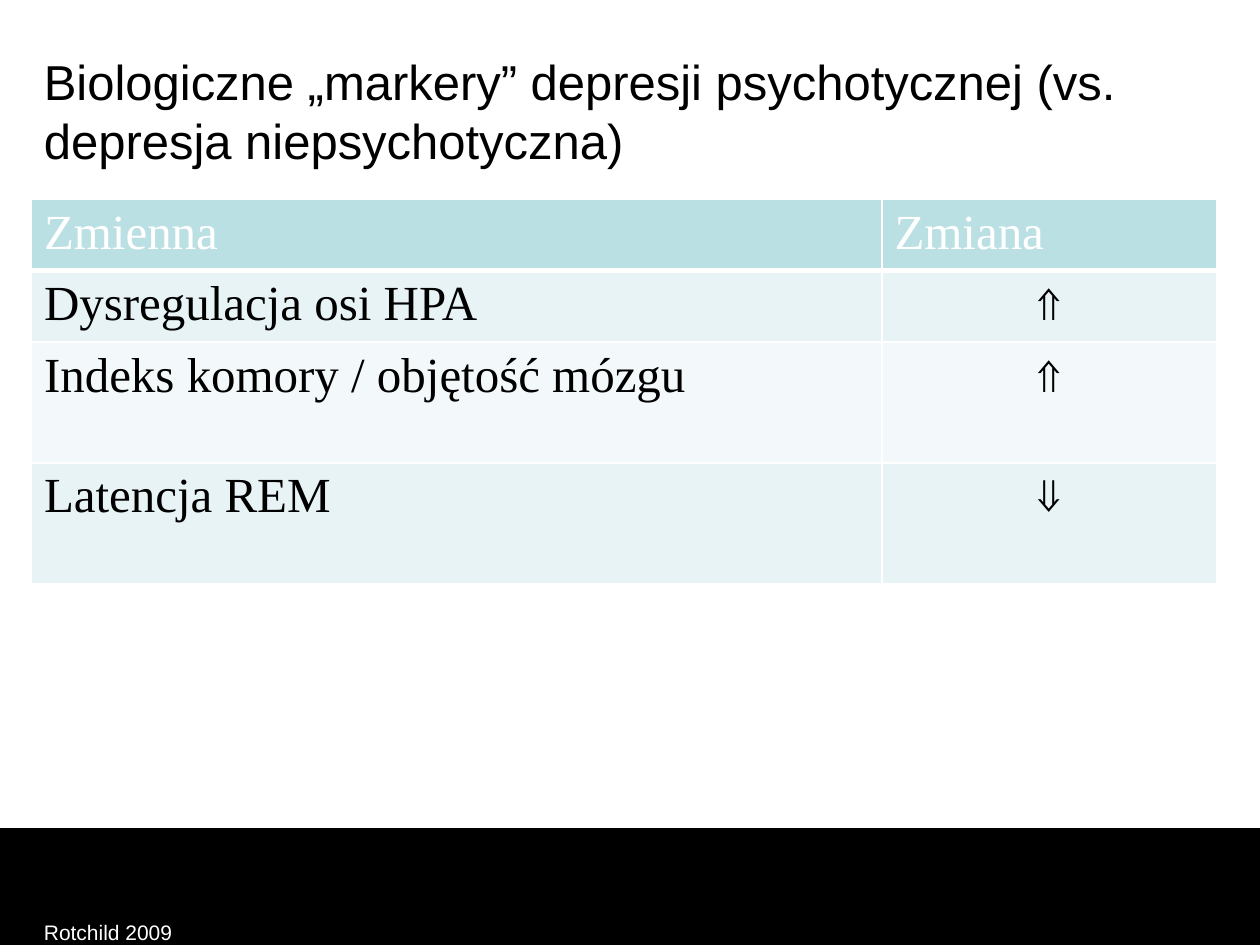
from lxml import etree
from pptx import Presentation
from pptx.dml.color import RGBColor
from pptx.enum.shapes import MSO_SHAPE
from pptx.enum.text import MSO_ANCHOR, PP_ALIGN
from pptx.oxml.ns import qn
from pptx.util import Inches, Pt

RECTANGLE = MSO_SHAPE.RECTANGLE
TOP, MIDDLE = MSO_ANCHOR.TOP, MSO_ANCHOR.MIDDLE
LEFT, CENTER = PP_ALIGN.LEFT, PP_ALIGN.CENTER
BLACK, WHITE = "000000", "FFFFFF"
HEADER_FILL, ODD_FILL, EVEN_FILL = "BBE0E3", "E7F3F4", "F3F9FA"
MARKERS = [
    ("Zmienna", "Zmiana"),
    ("Dysregulacja osi HPA", "⇑"),
    ("Indeks komory / objętość mózgu", "⇑"),
    ("Latencja REM", "⇓"),
]
COLUMN_WIDTHS = (6.75, 2.66)
ROW_HEIGHTS = (0.53, 0.53, 0.96, 0.96)


def set_fill(target, color):
    """Give a shape, cell or background a solid fill."""
    target.fill.solid()
    target.fill.fore_color.rgb = RGBColor.from_string(color)


def add_run(para, text, size, font, color):
    """Add one formatted run to a paragraph."""
    span = para.add_run()
    span.text = text
    span.font.size = Pt(size)
    span.font.name = font
    span.font.color.rgb = RGBColor.from_string(color)


def add_text(page, text, left, top, width, height, size, color, anchor):
    """Add a wrapping Arial text box."""
    box = page.shapes.add_textbox(Inches(left), Inches(top), Inches(width), Inches(height))
    box.text_frame.word_wrap = True
    box.text_frame.vertical_anchor = anchor
    add_run(box.text_frame.paragraphs[0], text, size, "Arial", color)


def add_footer_band(page):
    """Add the black band along the bottom of the slide."""
    band = page.shapes.add_shape(RECTANGLE, 0, Inches(6.58), Inches(10), Inches(0.92))
    band.shadow.inherit = False
    set_fill(band, BLACK)
    band.line.color.rgb = RGBColor.from_string(BLACK)
    band.line.width = Pt(0.75)


def set_borders(cell, color, bottom_width):
    """Draw the four borders of a cell, with its own bottom width."""
    properties = cell._tc.get_or_add_tcPr()
    for tag, width in (("lnL", 1), ("lnR", 1), ("lnT", 1), ("lnB", bottom_width)):
        line = etree.SubElement(properties, qn(f"a:{tag}"), w=str(Pt(width)))
        fill = etree.SubElement(line, qn("a:solidFill"))
        etree.SubElement(fill, qn("a:srgbClr"), val=color)


def add_marker_table(page):
    """Add the table of markers and the direction of their change."""
    frame = page.shapes.add_table(
        len(MARKERS), len(COLUMN_WIDTHS), Inches(0.25), Inches(1.58),
        Inches(sum(COLUMN_WIDTHS)), Inches(sum(ROW_HEIGHTS)))
    table = frame.table
    for column, width in zip(table.columns, COLUMN_WIDTHS):
        column.width = Inches(width)
    for row, height in zip(table.rows, ROW_HEIGHTS):
        row.height = Inches(height)
    for row_index, values in enumerate(MARKERS):
        is_header = row_index == 0
        body_fill = ODD_FILL if row_index % 2 else EVEN_FILL
        for column_index, text in enumerate(values):
            cell = table.cell(row_index, column_index)
            set_borders(cell, WHITE, 3 if is_header else 1)
            set_fill(cell, HEADER_FILL if is_header else body_fill)
            para = cell.text_frame.paragraphs[0]
            para.alignment = CENTER if column_index and not is_header else LEFT
            add_run(para, text, 28, "Times New Roman", WHITE if is_header else BLACK)


def main():
    """Build and save the slide."""
    deck = Presentation()
    deck.slide_width, deck.slide_height = Inches(10), Inches(7.5)
    page = deck.slides.add_slide(deck.slide_layouts[6])
    set_fill(page.background, WHITE)
    add_footer_band(page)
    add_text(page, "Biologiczne „markery” depresji psychotycznej (vs. depresja niepsychotyczna)",
             0.25, 0.25, 9.42, 1.25, 28, BLACK, MIDDLE)
    add_marker_table(page)
    add_text(page, "Rotchild 2009", 0.25, 7.25, 6.42, 0.25, 12, WHITE, TOP)
    deck.save("out.pptx")


if __name__ == "__main__":
    main()
